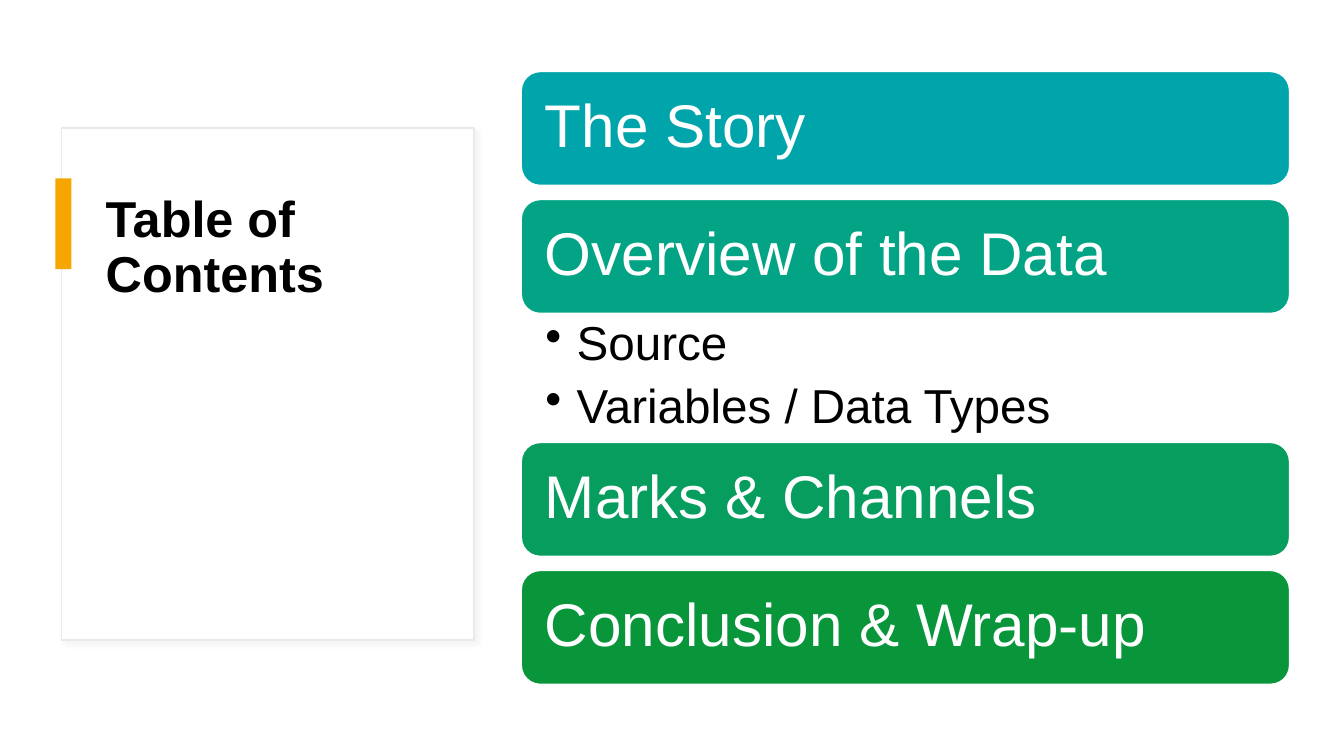
from lxml.etree import SubElement
from pptx import Presentation
from pptx.dml.color import RGBColor
from pptx.enum.shapes import MSO_SHAPE
from pptx.enum.text import MSO_ANCHOR, PP_ALIGN
from pptx.oxml.ns import qn
from pptx.util import Emu, Pt

PX = 9144
FONT = "Arial"


def block(kind, box, fill, edge=None):
    shape = slide.shapes.add_shape(kind, *[Emu(n * PX) for n in box])
    shape.fill.solid()
    shape.fill.fore_color.rgb = RGBColor.from_string(fill)
    if edge:
        shape.line.color.rgb = RGBColor.from_string(edge)
        shape.line.width = Pt(1)
    else:
        shape.line.fill.background()
    shape.shadow.inherit = False
    return shape


def write(frame, lines, size, color, pads, bold=False, after=0):
    frame.word_wrap = True
    left, top, right, base = [Emu(n * PX) for n in pads]
    frame.margin_left, frame.margin_top = left, top
    frame.margin_right, frame.margin_bottom = right, base
    for i, line in enumerate(lines):
        para = frame.add_paragraph() if i else frame.paragraphs[0]
        para.alignment = PP_ALIGN.LEFT
        para.line_spacing = 0.9
        para.space_after = Pt(after)
        run = para.add_run()
        run.text = line
        run.font.name = FONT
        run.font.size = Pt(size)
        run.font.bold = bold
        run.font.color.rgb = RGBColor.from_string(color)


deck = Presentation()
deck.slide_width = Emu(1333 * PX)
deck.slide_height = Emu(750 * PX)
slide = deck.slides.add_slide(deck.slide_layouts[6])

card = block(MSO_SHAPE.RECTANGLE, (61, 127, 409, 508), "FFFFFF", "E9E9E9")
effect = card._element.spPr.find(qn("a:effectLst"))
shade = SubElement(effect, qn("a:outerShdw"), blurRad=str(Pt(4)),
                   dist=str(Pt(3)), dir="2700000", algn="tl", rotWithShape="0")
tint = SubElement(shade, qn("a:srgbClr"), val="D9D9D9")
SubElement(tint, qn("a:alpha"), val="30000")

title = slide.shapes.add_textbox(*[Emu(n * PX) for n in (95, 188, 339, 385)])
write(title.text_frame, ["Table of Contents"], 36, "000000", (10, 5, 10, 5), bold=True)

block(MSO_SHAPE.RECTANGLE, (55, 177, 16, 90), "F5A700")

bars = [
    (71, "00A5AB", "The Story"),
    (198, "03A485", "Overview of the Data"),
    (439, "069D5E", "Marks & Channels"),
    (566, "09963B", "Conclusion & Wrap-up"),
]
for top, fill, label in bars:
    bar = block(MSO_SHAPE.ROUNDED_RECTANGLE, (517, top, 762, 113), fill, "FFFFFF")
    bar.text_frame.vertical_anchor = MSO_ANCHOR.MIDDLE
    write(bar.text_frame, [label], 43, "FFFFFF", (18, 18, 18, 18))

items = slide.shapes.add_textbox(*[Emu(n * PX) for n in (517, 311, 762, 129)])
write(items.text_frame, ["Source", "Variables / Data Types"], 34, "000000",
      (24, 6, 33, 6), after=8)
for para in items.text_frame.paragraphs:
    props = para._p.get_or_add_pPr()
    props.set("marL", str(31 * PX))
    props.set("indent", str(-31 * PX))
    SubElement(props, qn("a:buChar"), char="•")

deck.save("out.pptx")
